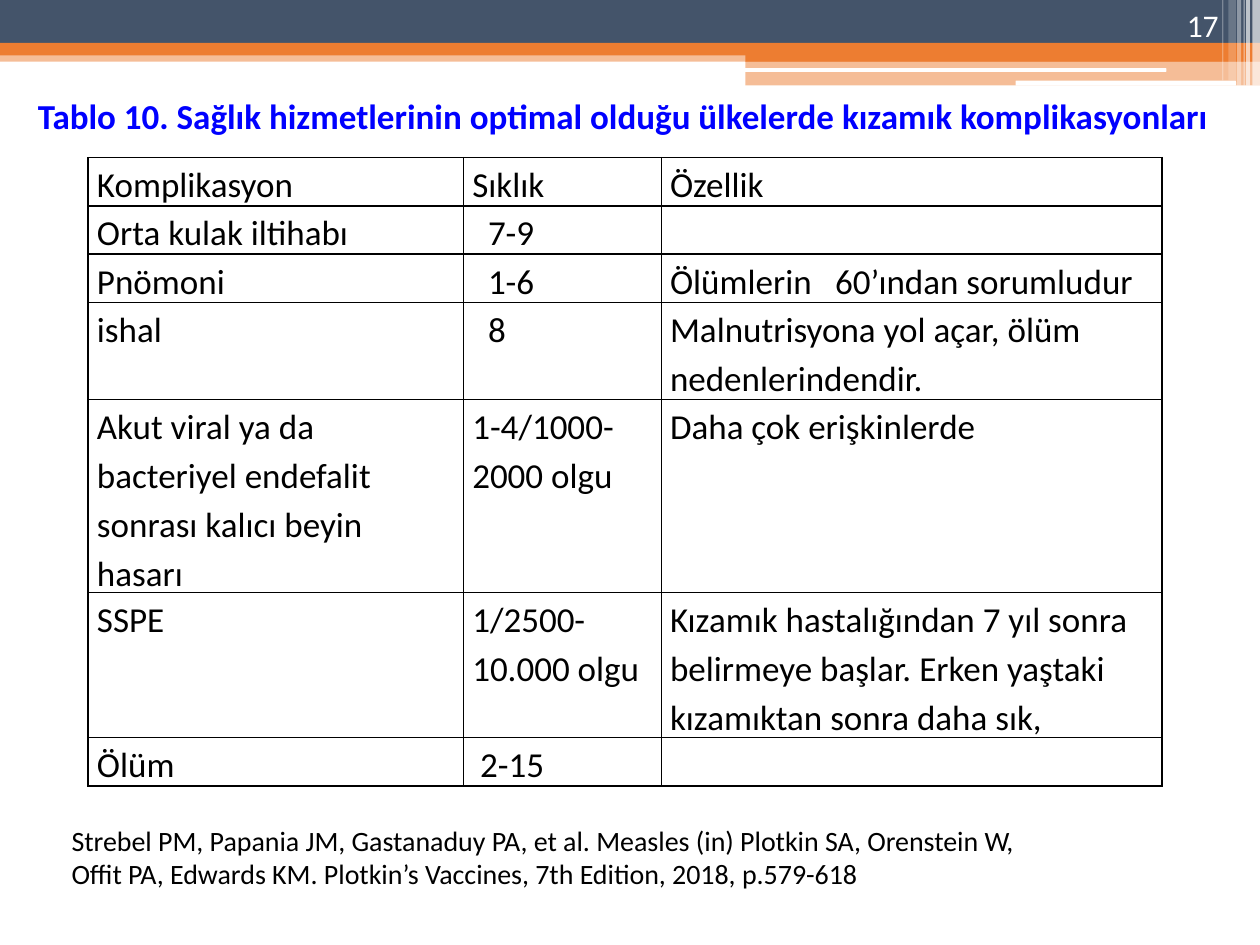
from lxml.etree import SubElement
from pptx import Presentation
from pptx.dml.color import RGBColor
from pptx.enum.shapes import MSO_SHAPE
from pptx.enum.text import MSO_ANCHOR, MSO_AUTO_SIZE, PP_ALIGN
from pptx.oxml.ns import qn
from pptx.util import Pt

INK = {"navy": "44546A", "orange": "ED7D31", "white": "FFFFFF",
       "black": "000000", "blue": "0000FF"}

BARS = [
    (0, 28.8, 720, 6.5, "orange", 50),
    (0, 0, 720, 24.5, "navy", 100),
    (0, 24.5, 720, 7.2, "orange", 100),
    (426, 28.1, 294, 7.2, "orange", 100),
    (426, 34.9, 294, 14, "orange", 50),
]
PILLS = [(425.5, 38.9, 241, 2.2), (580.3, 46.1, 126, 2.9)]
STRIPES = [
    (715.7, 4.3, 49, 65),
    (712.1, 2.2, 49, 65),
    (710.6, 0.72, 49, 60),
    (707, 2.2, 49, 40),
    (702, 4.3, 46, 20),
    (698.4, 0.72, 46, 30),
]

COLS = [214.5, 113, 286]
LINE = 27.6
TAB = 94.3
ROWS = [
    (1, 0, ["Komplikasyon", "Sıklık", "Özellik"]),
    (1, 9, ["Orta kulak iltihabı", "7-9", ""]),
    (1, 9, ["Pnömoni", "1-6", "Ölümlerin\t60’ından sorumludur"]),
    (2, 9, ["ishal", "8", "Malnutrisyona yol açar, ölüm nedenlerindendir."]),
    (4, 0, ["Akut viral ya da bacteriyel endefalit sonrası kalıcı beyin hasarı",
            "1-4/1000-2000 olgu", "Daha çok erişkinlerde"]),
    (3, 0, ["SSPE", "1/2500-10.000 olgu",
            "Kızamık hastalığından 7 yıl sonra belirmeye başlar. "
            "Erken yaştaki kızamıktan sonra daha sık,"]),
    (1, 4.5, ["Ölüm", "2-15", ""]),
]
TITLE = ("Tablo 10. Sağlık hizmetlerinin optimal olduğu ülkelerde "
         "kızamık komplikasyonları")
SOURCE = [
    "Strebel PM, Papania JM, Gastanaduy PA, et al. Measles (in) Plotkin SA, Orenstein W,",
    "Offit PA, Edwards KM. Plotkin’s Vaccines, 7th Edition, 2018, p.579-618",
]


def apply(item, values):
    for name, value in values.items():
        setattr(item, name, value)


def style(para, size, ink, bold=False):
    apply(para.font, {"name": "Calibri", "size": Pt(size), "bold": bold})
    para.font.color.rgb = RGBColor.from_string(INK[ink])


def add_bar(slide, left, top, width, height, ink, alpha=100,
            form=MSO_SHAPE.RECTANGLE):
    bar = slide.shapes.add_shape(form, Pt(left), Pt(top), Pt(width), Pt(height))
    bar.shadow.inherit = False
    bar.line.fill.background()
    bar.fill.solid()
    bar.fill.fore_color.rgb = RGBColor.from_string(INK[ink])
    if alpha < 100:
        tint = next(bar.element.spPr.iter(qn("a:srgbClr")))
        SubElement(tint, qn("a:alpha"), val=str(alpha * 1000))
    return bar


def add_band(slide):
    for bar in BARS:
        add_bar(slide, *bar)
    for pill in PILLS:
        add_bar(slide, *pill, "white", form=MSO_SHAPE.ROUNDED_RECTANGLE)
    for left, width, height, alpha in STRIPES:
        add_bar(slide, left, 0, width, height, "white", alpha)


def fill_text(shape, lines, frame, align, size, ink, bold=False):
    text = shape.text_frame
    text.text = "\n".join(lines)
    apply(text, frame)
    for para in text.paragraphs:
        para.alignment = align
        style(para, size, ink, bold)


def add_text(slide, left, top, width, height, *content):
    box = slide.shapes.add_textbox(Pt(left), Pt(top), Pt(width), Pt(height))
    fill_text(box, *content)


def set_title(slide, frame):
    title = slide.shapes.title
    apply(title, {"left": Pt(14.4), "top": Pt(50.4),
                  "width": Pt(689), "height": Pt(31.7)})
    fill_text(title, [TITLE], frame, PP_ALIGN.LEFT, 20, "blue", True)


def add_edges(cell):
    props = cell._tc.get_or_add_tcPr()
    for side in ("lnL", "lnR", "lnT", "lnB"):
        edge = SubElement(props, qn(f"a:{side}"), w=str(Pt(1)))
        fill = SubElement(edge, qn("a:solidFill"))
        SubElement(fill, qn("a:srgbClr"), val=INK["black"])


def add_tab(para):
    tabs = SubElement(para._p.get_or_add_pPr(), qn("a:tabLst"))
    SubElement(tabs, qn("a:tab"), pos=str(Pt(TAB)), algn="l")


def fill_cell(cell, words, indent):
    add_edges(cell)
    cell.fill.background()
    apply(cell, {"margin_left": Pt(5 + indent), "margin_right": Pt(5),
                 "margin_top": 0, "margin_bottom": 0})
    cell.text = words
    para = cell.text_frame.paragraphs[0]
    para.line_spacing = 1.15
    if "\t" in words:
        add_tab(para)
    style(para, 20, "black")


def add_grid(slide):
    count = sum(row[0] for row in ROWS)
    grid = slide.shapes.add_table(len(ROWS), len(COLS), Pt(50.4), Pt(90),
                                  Pt(sum(COLS)), Pt(count * LINE)).table
    apply(grid, {"first_row": False, "horz_banding": False})
    for col, width in zip(grid.columns, COLS):
        col.width = Pt(width)
    for row, (lines, indent, texts) in zip(grid.rows, ROWS):
        row.height = Pt(lines * LINE)
        for place, (cell, words) in enumerate(zip(row.cells, texts)):
            fill_cell(cell, words, indent if place == 1 else 0)


def main():
    deck = Presentation()
    apply(deck, {"slide_width": Pt(720), "slide_height": Pt(540)})
    slide = deck.slides.add_slide(deck.slide_layouts[5])
    grow = {"word_wrap": False, "auto_size": MSO_AUTO_SIZE.SHAPE_TO_FIT_TEXT,
            "vertical_anchor": MSO_ANCHOR.MIDDLE}
    base = {"word_wrap": True, "vertical_anchor": MSO_ANCHOR.BOTTOM}
    add_band(slide)
    add_text(slide, 643.7, 0, 59.8, 28.8, ["17"], base, PP_ALIGN.RIGHT, 18, "white")
    add_grid(slide)
    set_title(slide, grow)
    add_text(slide, 33.8, 466.6, 563, 46, SOURCE, grow, PP_ALIGN.LEFT, 16, "black")
    deck.save("out.pptx")


if __name__ == "__main__":
    main()
